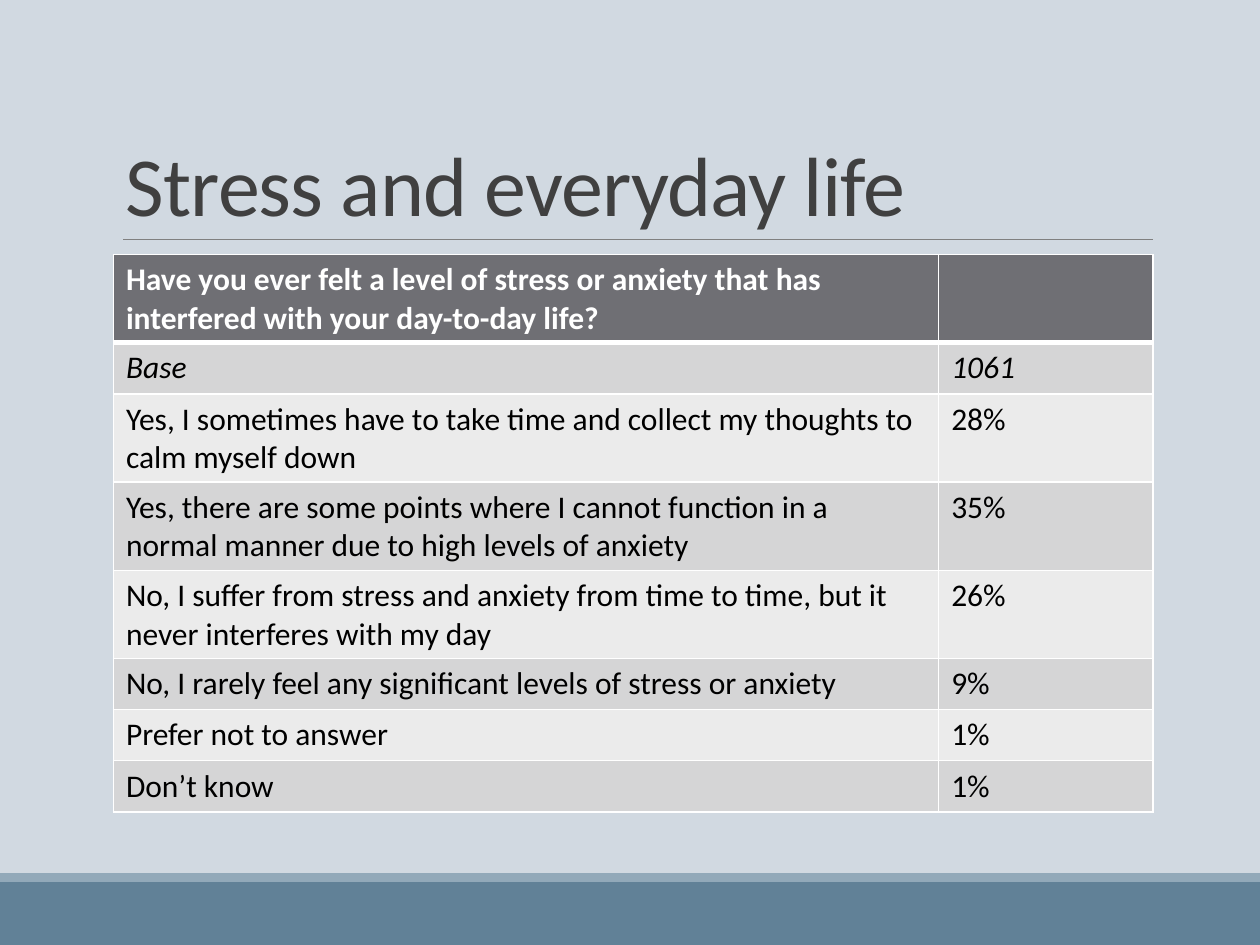
import pptx
import pptx.dml.color
import pptx.enum.shapes
import pptx.enum.text
import pptx.oxml.ns
import pptx.util
from dataclasses import dataclass
from lxml import etree

Pt = pptx.util.Pt
qn = pptx.oxml.ns.qn


@dataclass(frozen=True)
class Theme:
    font: str = "Calibri"
    title_size: int = 48
    table_size: int = 18
    background: str = "D1D9E1"
    footer: str = "618197"
    stripe: str = "92A9B9"
    rule: str = "808080"
    title: str = "404040"
    header: str = "6F6F74"
    bands: tuple = ("D5D5D6", "EBEBEB")
    white: str = "FFFFFF"
    black: str = "000000"


def rgb(color):
    return pptx.dml.color.RGBColor.from_string(color)


class SlideBuilder:
    def __init__(self, prs, theme):
        self.theme = theme
        self.s = prs.slides.add_slide(prs.slide_layouts[6])
        fill = self.s.background.fill
        fill.solid()
        fill.fore_color.rgb = rgb(theme.background)

    def bar(self, x, y, w, h, color):
        sp = self.s.shapes.add_shape(
            pptx.enum.shapes.MSO_SHAPE.RECTANGLE, Pt(x), Pt(y), Pt(w), Pt(h))
        sp.shadow.inherit = False
        sp.fill.solid()
        sp.fill.fore_color.rgb = rgb(color)
        sp.line.fill.background()

    def rule(self, x1, x2, y):
        line = self.s.shapes.add_connector(
            pptx.enum.shapes.MSO_CONNECTOR.STRAIGHT, Pt(x1), Pt(y), Pt(x2), Pt(y))
        line.line.color.rgb = rgb(self.theme.rule)
        line.line.width = Pt(0.5)
        etree.SubElement(line._element.spPr, qn("a:effectLst"))

    def run(self, p, text, size, color, bold=False, italic=False):
        r = p.add_run()
        r.text = text
        r.font.name = self.theme.font
        r.font.size = Pt(size)
        r.font.color.rgb = rgb(color)
        r.font.bold = bold
        r.font.italic = italic
        return r

    def title(self, x, y, w, h, text):
        tf = self.s.shapes.add_textbox(Pt(x), Pt(y), Pt(w), Pt(h)).text_frame
        tf.word_wrap = True
        tf.vertical_anchor = pptx.enum.text.MSO_ANCHOR.BOTTOM
        p = tf.paragraphs[0]
        p.line_spacing = 0.85
        r = self.run(p, text, self.theme.title_size, self.theme.title)
        r.font._element.set("spc", "-50")

    def border(self, cell, side, width):
        ln = etree.SubElement(cell._tc.get_or_add_tcPr(), qn(f"a:ln{side}"),
                              w=str(Pt(width)))
        fill = etree.SubElement(ln, qn("a:solidFill"))
        etree.SubElement(fill, qn("a:srgbClr"), val=self.theme.white)

    def table(self, x, y, col_widths, row_height, rows):
        t = self.theme
        table = self.s.shapes.add_table(
            len(rows), len(col_widths), Pt(x), Pt(y),
            Pt(sum(col_widths)), Pt(row_height * len(rows))).table
        for column, width in zip(table.columns, col_widths):
            column.width = Pt(width)
        for i, row in enumerate(rows):
            header, base = i == 0, i == 1
            for j, text in enumerate(row):
                cell = table.cell(i, j)
                # Thick line between the header and the body
                for side in "LRTB":
                    thick = (header and side == "B") or (base and side == "T")
                    self.border(cell, side, 3 if thick else 1)
                cell.fill.solid()
                cell.fill.fore_color.rgb = rgb(
                    t.header if header else t.bands[(i - 1) % 2])
                if text:
                    self.run(cell.text_frame.paragraphs[0], text, t.table_size,
                             t.white if header else t.black,
                             bold=header, italic=base)


def main():
    prs = pptx.Presentation()
    prs.slide_width, prs.slide_height = Pt(720), Pt(540)
    theme = Theme()
    slide = SlideBuilder(prs, theme)

    # Footer bands
    slide.bar(0, 504, 720, 36, theme.footer)
    slide.bar(0, 499, 720, 5, theme.stripe)

    # Heading
    slide.rule(70.5, 659, 136.8)
    slide.title(64.8, 22.5, 594, 114.3, "Stress and everyday life")

    # Survey results
    slide.table(64.8, 145.4, (471.6, 122.4), 29.2, [
        ("Have you ever felt a level of stress or anxiety that has interfered "
         "with your day-to-day life?", ""),
        ("Base", "1061"),
        ("Yes, I sometimes have to take time and collect my thoughts to calm "
         "myself down", "28%"),
        ("Yes, there are some points where I cannot function in a normal manner "
         "due to high levels of anxiety", "35%"),
        ("No, I suffer from stress and anxiety from time to time, but it never "
         "interferes with my day", "26%"),
        ("No, I rarely feel any significant levels of stress or anxiety", "9%"),
        ("Prefer not to answer", "1%"),
        ("Don’t know", "1%"),
    ])

    prs.save("out.pptx")


if __name__ == "__main__":
    main()
